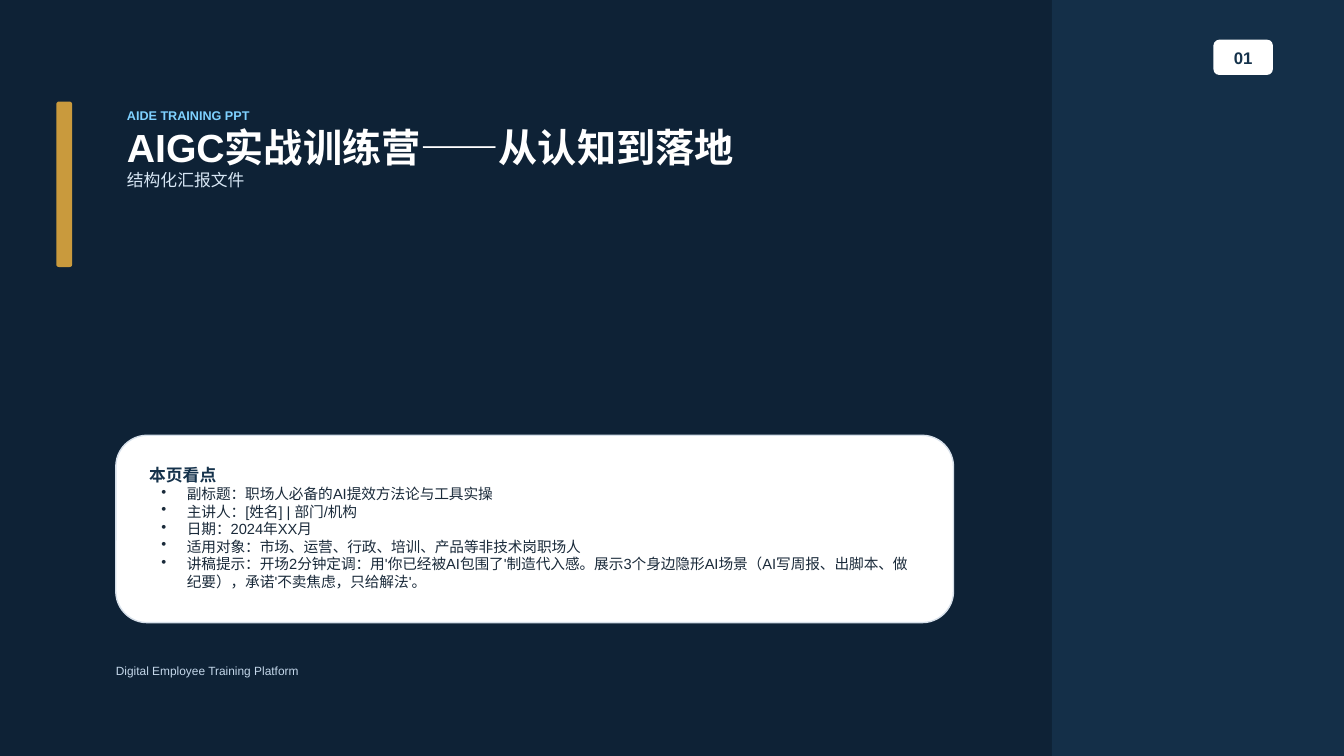
from dataclasses import dataclass

from lxml.etree import SubElement
from pptx import Presentation
from pptx.dml.color import RGBColor
from pptx.enum.shapes import MSO_SHAPE
from pptx.enum.text import MSO_ANCHOR, PP_ALIGN
from pptx.oxml.ns import qn
from pptx.util import Cm, Pt


@dataclass(frozen=True)
class Theme:
    font: str = "Arial"
    background: str = "F8FAFC"
    navy: str = "0E2236"
    blue: str = "15324B"
    gold: str = "C99A3D"
    white: str = "FFFFFF"
    sky: str = "7FD1FF"
    subtitle: str = "D8E7F5"
    border: str = "D7E0EA"
    body: str = "1A2A3A"
    footer: str = "C4D7EA"
    title_size: float = 28
    heading_size: float = 12
    body_size: float = 10.5
    label_size: float = 9
    footer_size: float = 8.5


theme = Theme()


def add_panel(page, kind, place, color):
    panel = page.shapes.add_shape(kind, *map(Cm, place))
    panel.shadow.inherit = False
    panel.fill.solid()
    panel.fill.fore_color.rgb = RGBColor.from_string(color)
    panel.line.fill.background()
    return panel


def write_lines(box, insets, lines, anchor=MSO_ANCHOR.TOP, align=PP_ALIGN.LEFT):
    frame = box.text_frame
    frame.word_wrap = True
    frame.vertical_anchor = anchor
    frame.margin_left, frame.margin_top, frame.margin_right, frame.margin_bottom = map(Cm, insets)
    frame.text = "\n".join(line[0] for line in lines)
    for para, (_, size, color, bold) in zip(frame.paragraphs, lines):
        para.alignment = align
        for span in para.runs:
            span.font.name = theme.font
            span.font.size = Pt(size)
            span.font.bold = bold
            span.font.color.rgb = RGBColor.from_string(color)


deck = Presentation()
deck.slide_width, deck.slide_height = Cm(33.87), Cm(19.05)
page = deck.slides.add_slide(deck.slide_layouts[6])
page.background.fill.solid()
page.background.fill.fore_color.rgb = RGBColor.from_string(theme.background)

add_panel(page, MSO_SHAPE.RECTANGLE, (0, 0, 33.87, 19.05), theme.navy)
side_panel = add_panel(page, MSO_SHAPE.RECTANGLE, (26.51, 0, 7.36, 19.05), theme.blue)
side_color = side_panel.fill._xPr.find(qn("a:solidFill"))[0]
SubElement(side_color, qn("a:alpha"), val="86000")
add_panel(page, MSO_SHAPE.ROUNDED_RECTANGLE, (1.42, 2.56, 0.4, 4.17), theme.gold)

badge = add_panel(page, MSO_SHAPE.ROUNDED_RECTANGLE, (30.58, 1, 1.5, 0.89), theme.white)
write_lines(badge, (0.08, 0.1, 0.08, 0.08), [("01", theme.heading_size, theme.blue, True)],
            MSO_ANCHOR.MIDDLE, PP_ALIGN.CENTER)

title_box = page.shapes.add_textbox(Cm(3.2), Cm(2.72), Cm(22.78), Cm(5.28))
write_lines(title_box, (0, 0, 0, 0), [
    ("AIDE TRAINING PPT", theme.label_size, theme.sky, True),
    ("AIGC实战训练营——从认知到落地", theme.title_size, theme.white, True),
    ("结构化汇报文件", theme.heading_size, theme.subtitle, False),
])

card = add_panel(page, MSO_SHAPE.ROUNDED_RECTANGLE, (2.92, 10.97, 21.11, 4.72), theme.white)
card.line.color.rgb = RGBColor.from_string(theme.border)
card.line.width = Pt(1)
points = [
    "副标题：职场人必备的AI提效方法论与工具实操",
    "主讲人：[姓名] | 部门/机构",
    "日期：2024年XX月",
    "适用对象：市场、运营、行政、培训、产品等非技术岗职场人",
    "讲稿提示：开场2分钟定调：用'你已经被AI包围了'制造代入感。展示3个身边隐形AI场景（AI写周报、出脚本、做纪要），承诺'不卖焦虑，只给解法'。",
]
write_lines(card, (0.61, 0.51, 0.56, 0.43),
            [("本页看点", theme.heading_size, theme.blue, True)]
            + [(point, theme.body_size, theme.body, False) for point in points])
for para in card.text_frame.paragraphs[1:]:
    properties = para._p.get_or_add_pPr()
    properties.set("marL", str(Cm(0.95)))
    properties.set("indent", str(-Cm(0.64)))
    SubElement(properties, qn("a:buChar"), char="•")

footer_box = page.shapes.add_textbox(Cm(2.92), Cm(16.71), Cm(13.89), Cm(0.61))
write_lines(footer_box, (0, 0, 0, 0),
            [("Digital Employee Training Platform", theme.footer_size, theme.footer, False)])

deck.save("out.pptx")
